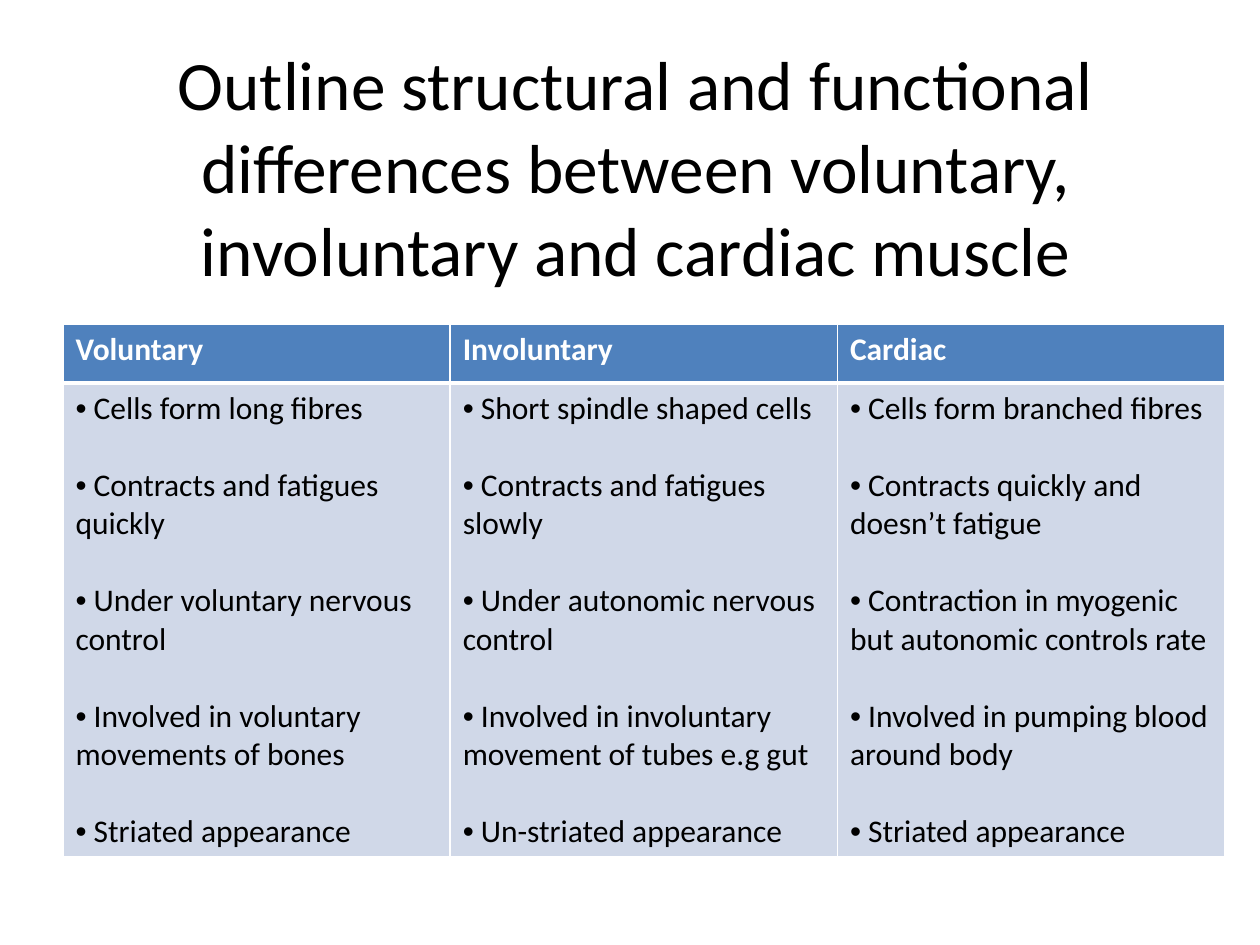
from lxml.etree import SubElement
from pptx import Presentation
from pptx.dml.color import RGBColor
from pptx.enum.text import MSO_ANCHOR as Anchor, MSO_AUTO_SIZE as AutoSize, PP_ALIGN as Align
from pptx.oxml.ns import qn
from pptx.util import Inches, Pt

TITLE = "Outline structural and functional differences between voluntary, involuntary and cardiac muscle"
MUSCLES = {
    "Voluntary": [
        "Cells form long fibres",
        "Contracts and fatigues quickly",
        "Under voluntary nervous control",
        "Involved in voluntary movements of bones",
        "Striated appearance",
    ],
    "Involuntary": [
        "Short spindle shaped cells",
        "Contracts and fatigues slowly",
        "Under autonomic nervous control",
        "Involved in involuntary movement of tubes e.g gut",
        "Un-striated appearance",
    ],
    "Cardiac": [
        "Cells form branched fibres",
        "Contracts quickly and doesn’t fatigue",
        "Contraction in myogenic but autonomic controls rate",
        "Involved in pumping blood around body",
        "Striated appearance",
    ],
}
COLORS = {"text": "000000", "white": "FFFFFF", "header": "4F81BD", "body": "D0D8E8"}
TITLE_FONT = {"name": "Calibri", "size": Pt(39.6), "bold": False}
HEADER_FONT = {"name": "Calibri", "size": Pt(18), "bold": True}
BODY_FONT = {**HEADER_FONT, "bold": False}
TITLE_BOX = {"left": 0.59, "top": 0.3, "width": 8.91, "height": 2.03}
TABLE_BOX = (0.5, 2.57, 9.22, 4.17)
HEADER_HEIGHT = 0.47
LINE_GAP = Pt(22)


def write(para, text, font, color):
    span = para.add_run()
    span.text = text
    for name, value in font.items():
        setattr(span.font, name, value)
    span.font.color.rgb = RGBColor.from_string(COLORS[color])


def add_bullet(para):
    props = para._p.get_or_add_pPr()
    props.set("marL", "0")
    props.set("indent", "0")
    SubElement(props, qn("a:buFont"), typeface="Arial")
    SubElement(props, qn("a:buChar"), char="•")


def style_cell(cell, fill, thick_side):
    props = cell._tc.get_or_add_tcPr()
    for side in "LRTB":
        width = Pt(3 if side == thick_side else 1)
        line = SubElement(props, qn(f"a:ln{side}"), w=str(width))
        SubElement(SubElement(line, qn("a:solidFill")), qn("a:srgbClr"), val=COLORS["white"])
    cell.fill.solid()
    cell.fill.fore_color.rgb = RGBColor.from_string(COLORS[fill])


def add_title(page):
    title = page.shapes.title
    for name, value in TITLE_BOX.items():
        setattr(title, name, Inches(value))
    frame = title.text_frame
    for name, value in {"word_wrap": True, "auto_size": AutoSize.NONE, "vertical_anchor": Anchor.MIDDLE}.items():
        setattr(frame, name, value)
    frame.paragraphs[0].alignment = Align.CENTER
    write(frame.paragraphs[0], TITLE, TITLE_FONT, "text")


def add_muscle_table(page):
    table = page.shapes.add_table(2, len(MUSCLES), *map(Inches, TABLE_BOX)).table
    table.rows[0].height = Inches(HEADER_HEIGHT)
    table.rows[1].height = Inches(TABLE_BOX[3] - HEADER_HEIGHT)
    for column, (muscle, features) in enumerate(MUSCLES.items()):
        header, body = table.cell(0, column), table.cell(1, column)
        style_cell(header, "header", "B")
        style_cell(body, "body", "T")
        write(header.text_frame.paragraphs[0], muscle, HEADER_FONT, "white")
        for index, feature in enumerate(features):
            frame = body.text_frame
            para = frame.add_paragraph() if index else frame.paragraphs[0]
            para.space_before = LINE_GAP if index else Pt(0)
            add_bullet(para)
            write(para, f" {feature}", BODY_FONT, "text")


def main():
    deck = Presentation()
    deck.slide_width, deck.slide_height = Inches(10), Inches(7.5)
    page = deck.slides.add_slide(deck.slide_layouts[5])
    add_title(page)
    add_muscle_table(page)
    deck.save("out.pptx")


if __name__ == "__main__":
    main()
